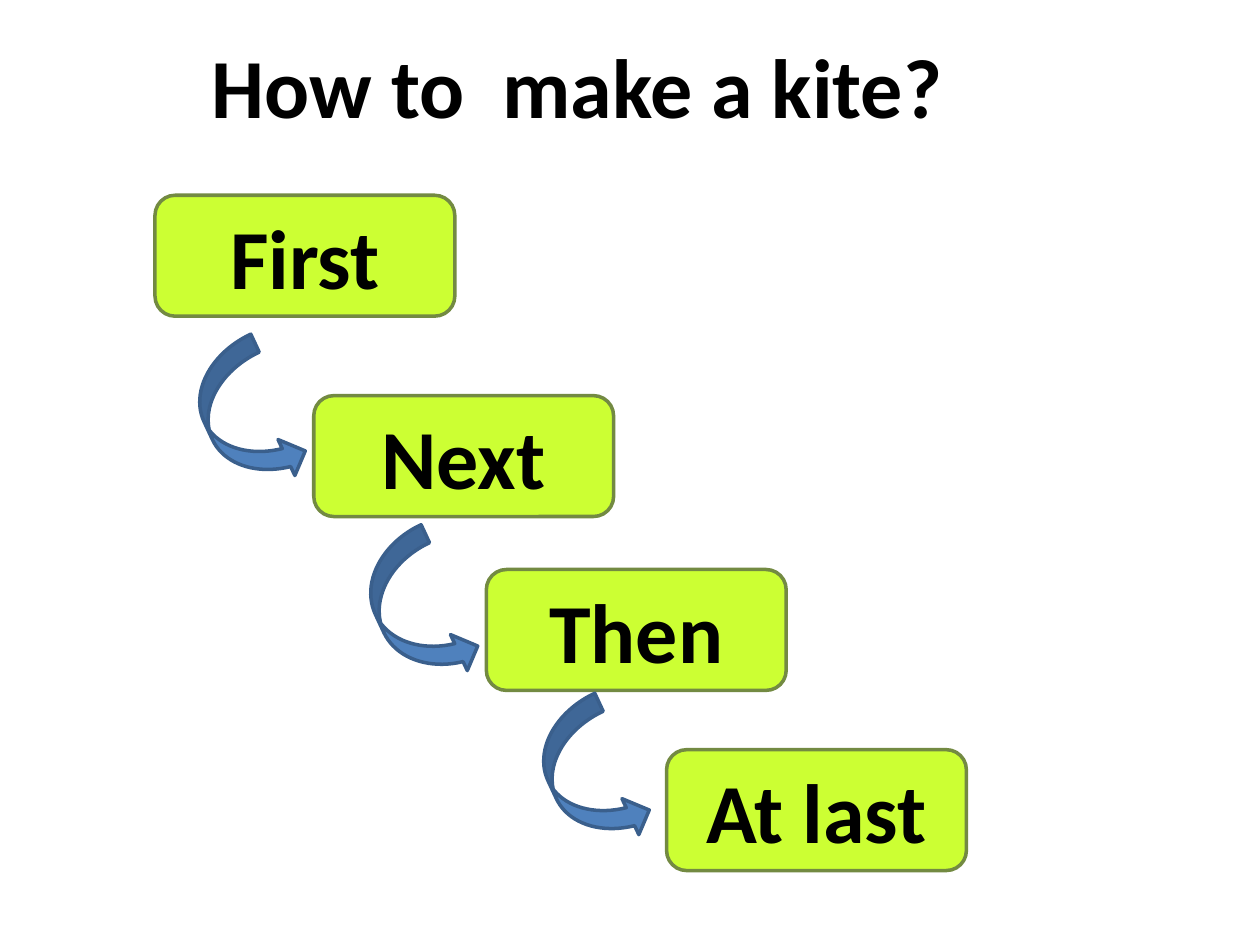
from dataclasses import dataclass

from pptx import Presentation
from pptx.dml.color import RGBColor
from pptx.enum.shapes import MSO_SHAPE
from pptx.enum.text import MSO_ANCHOR, MSO_AUTO_SIZE, PP_ALIGN
from pptx.util import Inches, Pt

ROUNDED_BOX = MSO_SHAPE.ROUNDED_RECTANGLE
CURVED_ARROW = MSO_SHAPE.CURVED_RIGHT_ARROW
LEFT, CENTER = PP_ALIGN.LEFT, PP_ALIGN.CENTER
TOP, MIDDLE = MSO_ANCHOR.TOP, MSO_ANCHOR.MIDDLE
NO_AUTOFIT = MSO_AUTO_SIZE.NONE
TITLE_ONLY_LAYOUT = 5


@dataclass(frozen=True)
class Theme:
    font: str = "Calibri"
    text_size: int = 48
    line_width: int = 2
    text: RGBColor = RGBColor(0x00, 0x00, 0x00)
    step_fill: RGBColor = RGBColor(0xCC, 0xFF, 0x33)
    step_line: RGBColor = RGBColor(0x73, 0x8A, 0x42)
    arrow_fill: RGBColor = RGBColor(0x4F, 0x81, 0xBD)
    arrow_line: RGBColor = RGBColor(0x3A, 0x5F, 0x8C)


THEME = Theme()
SLIDE_SIZE = (10, 7.5)
TITLE_AREA = (1.58, 0.22, 7.36, 0.94)
STEP_SIZE = (2.38, 0.96)
ARROW_WIDTH = 0.63
ARROW_ROTATION = 335

# Label and top-left corner of each stair in the sequence
STEPS = [
    ("First", 1.23, 1.55),
    ("Next", 2.49, 3.14),
    ("Then", 3.86, 4.52),
    ("At last", 5.29, 5.95),
]
# Left, top and height of the arrow leading to each following step
ARROWS = [(1.64, 2.73, 1.18), (3, 4.24, 1.22), (4.37, 5.58, 1.18)]


def write_label(frame, label, alignment, anchor):
    frame.word_wrap = True
    frame.auto_size = NO_AUTOFIT
    frame.vertical_anchor = anchor
    paragraph = frame.paragraphs[0]
    paragraph.alignment = alignment
    run = paragraph.add_run()
    run.text = label
    run.font.name = THEME.font
    run.font.size = Pt(THEME.text_size)
    run.font.bold = True
    run.font.color.rgb = THEME.text


def add_title(slide, wording):
    title = slide.shapes.title
    title.left, title.top, title.width, title.height = map(Inches, TITLE_AREA)
    write_label(title.text_frame, wording, LEFT, TOP)


def add_outlined_shape(slide, preset, area, fill, line):
    shape = slide.shapes.add_shape(preset, *map(Inches, area))
    shape.shadow.inherit = False
    shape.fill.solid()
    shape.fill.fore_color.rgb = fill
    shape.line.color.rgb = line
    shape.line.width = Pt(THEME.line_width)
    return shape


def add_step(slide, label, left, top):
    step = add_outlined_shape(slide, ROUNDED_BOX, (left, top, *STEP_SIZE),
                              THEME.step_fill, THEME.step_line)
    write_label(step.text_frame, label, CENTER, MIDDLE)


def add_step_arrow(slide, left, top, height):
    arrow = add_outlined_shape(slide, CURVED_ARROW,
                               (left, top, ARROW_WIDTH, height),
                               THEME.arrow_fill, THEME.arrow_line)
    arrow.rotation = ARROW_ROTATION


def main():
    presentation = Presentation()
    presentation.slide_width, presentation.slide_height = map(Inches, SLIDE_SIZE)
    slide = presentation.slides.add_slide(
        presentation.slide_layouts[TITLE_ONLY_LAYOUT])
    add_title(slide, "How to  make a kite?")
    for step in STEPS:
        add_step(slide, *step)
    for arrow in ARROWS:
        add_step_arrow(slide, *arrow)
    presentation.save("out.pptx")


if __name__ == "__main__":
    main()
